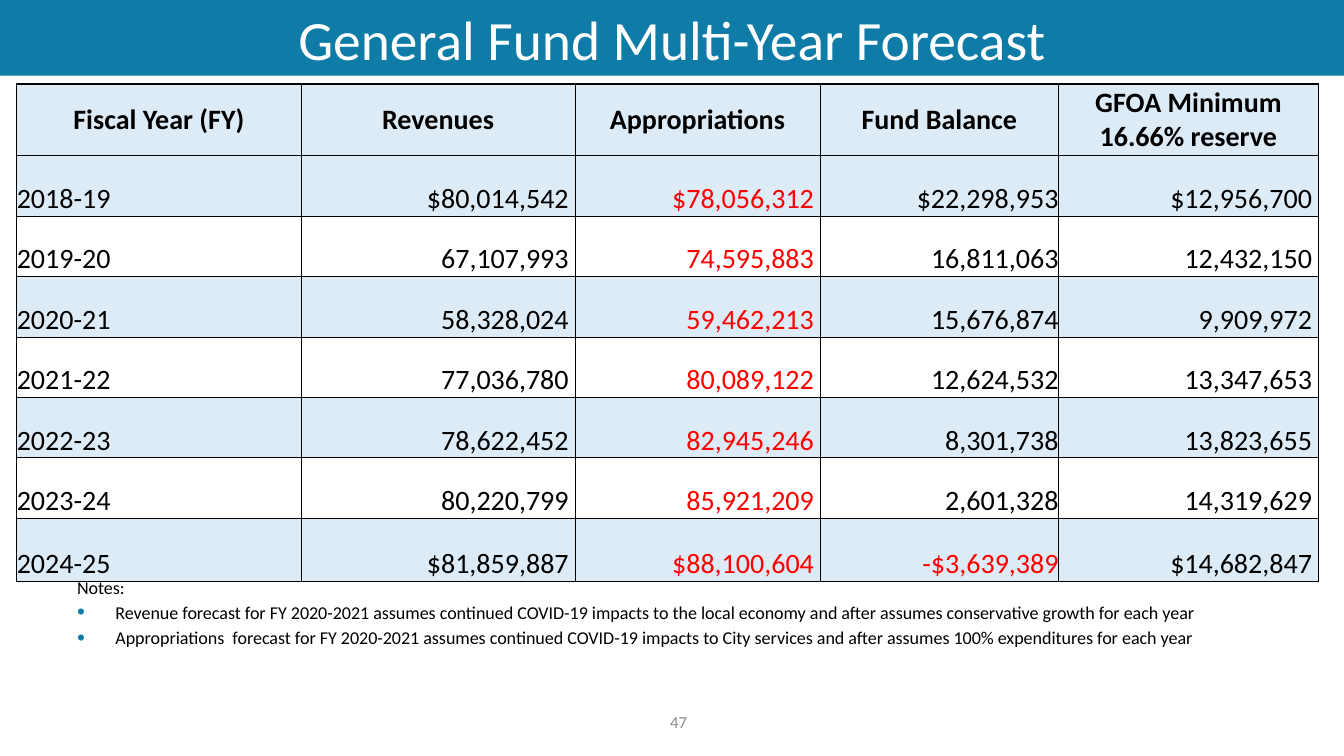
from dataclasses import dataclass

from lxml.etree import SubElement
from pptx import Presentation
from pptx.dml.color import RGBColor
from pptx.enum.shapes import MSO_SHAPE
from pptx.enum.text import MSO_ANCHOR, PP_ALIGN
from pptx.oxml.ns import qn
from pptx.util import Emu, Inches, Pt

UNIT = Inches(1) // 12
GRID_COLUMNS, GRID_ROWS = 160, 90


@dataclass(frozen=True)
class Theme:
    font: str = "Calibri"
    accent: str = "0F7CA7"
    band: str = "DDEBF7"
    white: str = "FFFFFF"
    ink: str = "000000"
    alert: str = "FF0000"
    muted: str = "8C8C8C"
    title_size: float = 39.6
    table_size: float = 20
    note_size: float = 12.9
    number_size: float = 12
    thin: float = 0.5
    thick: float = 1


THEME = Theme()

COLUMN_SPANS = [33.85, 32.6, 29.2, 28.4, 30.9]
ROW_SPANS = [8.5] + [7.2] * 6 + [7.5]
HEADINGS = ["Fiscal Year (FY)", "Revenues", "Appropriations", "Fund Balance",
            "GFOA Minimum 16.66% reserve"]
FORECAST = [
    ["2018-19", "$80,014,542", "$78,056,312", "$22,298,953", "$12,956,700"],
    ["2019-20", "67,107,993", "74,595,883", "16,811,063", "12,432,150"],
    ["2020-21", "58,328,024", "59,462,213", "15,676,874", "9,909,972"],
    ["2021-22", "77,036,780", "80,089,122", "12,624,532", "13,347,653"],
    ["2022-23", "78,622,452", "82,945,246", "8,301,738", "13,823,655"],
    ["2023-24", "80,220,799", "85,921,209", "2,601,328", "14,319,629"],
    ["2024-25", "$81,859,887", "$88,100,604", "-$3,639,389", "$14,682,847"],
]
APPROPRIATIONS, FUND_BALANCE = 2, 3
NOTES = [
    "Revenue forecast for FY 2020-2021 assumes continued COVID-19 impacts to the "
    "local economy and after assumes conservative growth for each year",
    "Appropriations  forecast for FY 2020-2021 assumes continued COVID-19 impacts to "
    "City services and after assumes 100% expenditures for each year",
]


def units(*spans):
    return [Emu(round(span * UNIT)) for span in spans]


def assign(target, values):
    for name, value in values.items():
        setattr(target, name, value)


def write(para, text, size, color, align=PP_ALIGN.LEFT, bold=False):
    para.alignment = align
    span = para.add_run()
    span.text = text
    assign(span.font, {"name": THEME.font, "size": Pt(size), "bold": bold})
    span.font.color.rgb = RGBColor.from_string(color)


def add_bullet(para):
    properties = para._p.get_or_add_pPr()
    indent = Inches(0.38)
    properties.set("marL", str(indent))
    properties.set("indent", str(-indent))
    color = SubElement(properties, qn("a:buClr"))
    SubElement(color, qn("a:srgbClr"), val=THEME.accent)
    SubElement(properties, qn("a:buSzPct"), val="125000")
    SubElement(properties, qn("a:buFont"), typeface="Arial")
    SubElement(properties, qn("a:buChar"), char="•")


def add_borders(cell, widths):
    properties = cell._tc.get_or_add_tcPr()
    for side, width in widths.items():
        line = SubElement(properties, qn(f"a:ln{side}"), w=str(Pt(width)))
        fill = SubElement(line, qn("a:solidFill"))
        SubElement(fill, qn("a:srgbClr"), val=THEME.ink)


def add_title(page, box):
    banner = page.shapes.add_shape(MSO_SHAPE.RECTANGLE, *units(*box))
    banner.shadow.inherit = False
    banner.fill.solid()
    banner.fill.fore_color.rgb = RGBColor.from_string(THEME.accent)
    banner.line.fill.background()
    frame = banner.text_frame
    assign(frame, {"word_wrap": True, "vertical_anchor": MSO_ANCHOR.MIDDLE,
                   "margin_top": 0, "margin_bottom": 0})
    write(frame.paragraphs[0], "General Fund Multi-Year Forecast",
          THEME.title_size, THEME.white, PP_ALIGN.CENTER)


def fill_cell(cell, text, row, column):
    last_row, last_column = len(FORECAST), len(HEADINGS) - 1
    header = row == 0
    heavy = {"L": column in (0, last_column), "R": column >= FUND_BALANCE,
             "T": header, "B": row == last_row}
    add_borders(cell, {side: THEME.thick if bold else THEME.thin
                       for side, bold in heavy.items()})
    cell.fill.solid()
    banded = header or row % 2 == 1
    cell.fill.fore_color.rgb = RGBColor.from_string(THEME.band if banded else THEME.white)
    padded = not header and column not in (0, FUND_BALANCE)
    assign(cell, {
        "margin_left": 0, "margin_top": 0, "margin_bottom": 0,
        "margin_right": Inches(0.06) if padded else 0,
        "vertical_anchor": MSO_ANCHOR.MIDDLE if header else MSO_ANCHOR.BOTTOM,
    })
    if header:
        align = PP_ALIGN.CENTER
    else:
        align = PP_ALIGN.RIGHT if column else PP_ALIGN.LEFT
    warned = not header and (column == APPROPRIATIONS or text.startswith("-"))
    write(cell.text_frame.paragraphs[0], text, THEME.table_size,
          THEME.alert if warned else THEME.ink, align, header)


def add_forecast(page, box):
    records = [HEADINGS] + FORECAST
    table = page.shapes.add_table(len(records), len(HEADINGS), *units(*box)).table
    assign(table, {"first_row": False, "horz_banding": False})
    for column, width in zip(table.columns, units(*COLUMN_SPANS)):
        column.width = width
    for row, height in zip(table.rows, units(*ROW_SPANS)):
        row.height = height
    for row, record in enumerate(records):
        for column, text in enumerate(record):
            fill_cell(table.cell(row, column), text, row, column)


def add_notes(page, box):
    frame = page.shapes.add_textbox(*units(*box)).text_frame
    frame.word_wrap = True
    write(frame.paragraphs[0], "Notes:", THEME.note_size, THEME.ink)
    for note in NOTES:
        para = frame.add_paragraph()
        add_bullet(para)
        para.space_before = Pt(THEME.note_size * 0.2)
        write(para, note, THEME.note_size, THEME.ink)


def add_page_number(page, box):
    frame = page.shapes.add_textbox(*units(*box)).text_frame
    assign(frame, {"word_wrap": True, "vertical_anchor": MSO_ANCHOR.MIDDLE})
    write(frame.paragraphs[0], "47", THEME.number_size, THEME.muted, PP_ALIGN.RIGHT)


def main():
    deck = Presentation()
    deck.slide_width, deck.slide_height = units(GRID_COLUMNS, GRID_ROWS)
    page = deck.slides.add_slide(deck.slide_layouts[6])
    add_title(page, (0, 0, GRID_COLUMNS, 9))
    add_notes(page, (8, 68, 144, 12))
    add_page_number(page, (77, 83.5, 6, 4.8))
    add_forecast(page, (2, 10, sum(COLUMN_SPANS), sum(ROW_SPANS)))
    deck.save("out.pptx")


if __name__ == "__main__":
    main()
